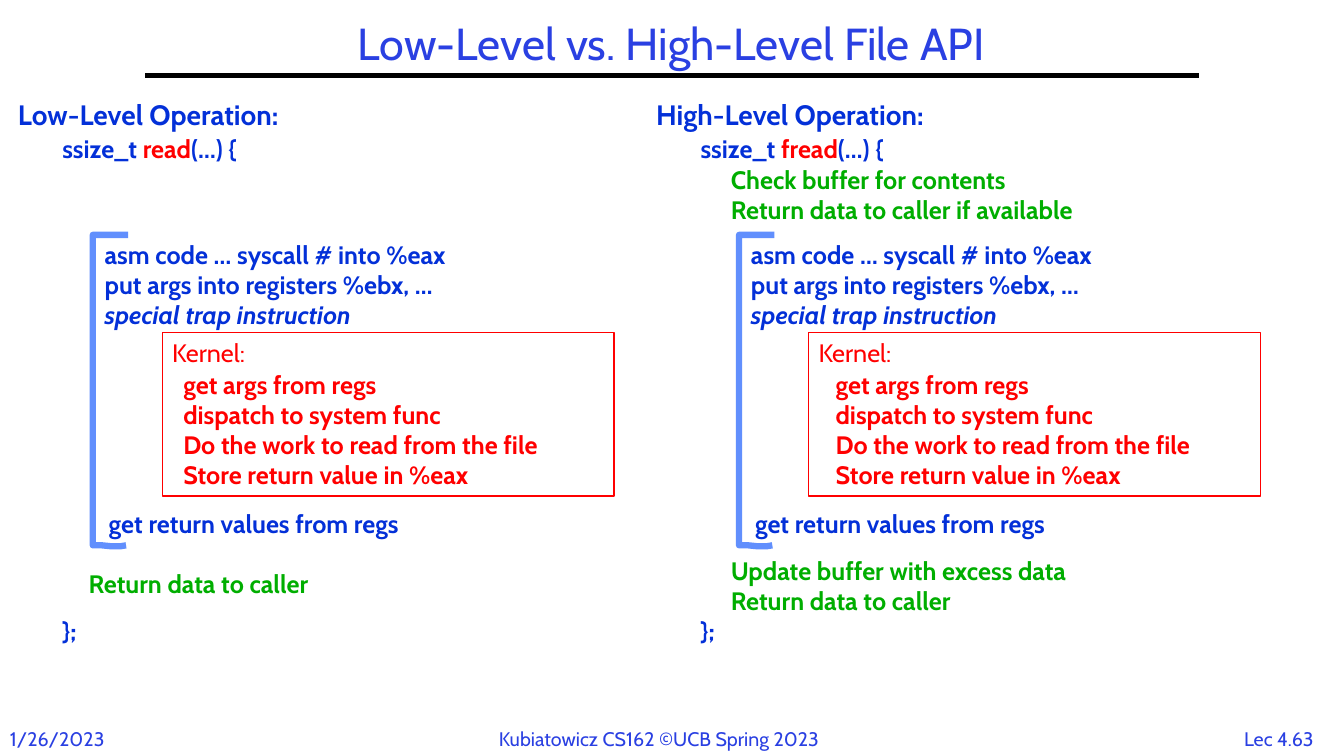
from pptx import Presentation
from pptx.dml.color import RGBColor
from pptx.enum.shapes import MSO_CONNECTOR, MSO_SHAPE
from pptx.enum.text import MSO_ANCHOR, PP_ALIGN
from pptx.oxml.ns import qn
from pptx.util import Pt
from lxml.etree import SubElement

PX = 9144  # EMU per px, 100 px to the inch
THEME = {
    "font": "Cabin",
    "title": RGBColor(0x2A, 0x40, 0xE2),
    "code": RGBColor(0x03, 0x30, 0xD8),
    "kernel": RGBColor(0xFF, 0x00, 0x00),
    "buffer": RGBColor(0x00, 0xAE, 0x00),
    "bracket": RGBColor(0x61, 0x8F, 0xFD),
    "rule": RGBColor(0x00, 0x00, 0x00),
    "title_size": 32, "heading_size": 20, "body_size": 18, "footer_size": 14,
}

TITLE = "Low-Level vs. High-Level File API"
FOOTERS = [
    ("1/26/2023", (0, 716, 140, 34), PP_ALIGN.LEFT),
    ("Kubiatowicz CS162 ©UCB Spring 2023", (485, 716, 363, 34), PP_ALIGN.LEFT),
    ("Lec 4.63", (1220, 716, 97, 33), PP_ALIGN.CENTER),
]
SYSCALL = ["asm code … syscall # into %eax", "put args into registers %ebx, …"]
TRAP = "special trap instruction"
KERNEL_TITLE = "Kernel:"
KERNEL_STEPS = ["get args from regs", "dispatch to system func",
                "Do the work to read from the file", "Store return value in %eax"]
RESULT = "get return values from regs"
COLUMNS = [
    {"heading": "Low-Level Operation:", "function": "read",
     "outer": 0, "inner": 0, "steps": 0,
     "extras": [((67, 559, 555, 40), ["Return data to caller"])]},
    {"heading": "High-Level Operation:", "function": "fread",
     "outer": 633, "inner": 641, "steps": 647,
     "extras": [((704, 158, 555, 71), ["Check buffer for contents",
                                       "Return data to caller if available"]),
                ((704, 546, 555, 71), ["Update buffer with excess data",
                                       "Return data to caller"])]},
]
BRACKET = [(127, 233), (92, 233), (92, 541), (101, 541), (111, 542), (119, 542), (125, 541)]
CLOSING_GAP = 323  # points between the function's opening and closing lines


def emu(*lengths):
    return [length * PX for length in lengths]


def apply(target, **values):
    for name, value in values.items():
        setattr(target, name, value)


def write(frame, lines, size, color, bold=True, indent=0, **para_values):
    """Each line is a string or a list of (text, font values) pairs."""
    for index, line in enumerate(lines):
        para = frame.paragraphs[0] if index == 0 else frame.add_paragraph()
        apply(para, **para_values)
        if indent:
            properties = para._p.get_or_add_pPr()
            properties.set("marL", str(indent * PX))
            properties.set("indent", "0")
        for text, changes in [(line, {})] if isinstance(line, str) else line:
            span = para.add_run()
            span.text = text
            values = {"name": THEME["font"], "size": Pt(THEME[size]), "bold": bold, **changes}
            span.font.color.rgb = THEME[values.pop("color", color)]
            apply(span.font, **values)


def add_text(page, place, lines, size="body_size", color="code", wrap=True,
             anchor=MSO_ANCHOR.TOP, **style):
    frame = page.shapes.add_textbox(*emu(*place)).text_frame
    apply(frame, word_wrap=wrap, vertical_anchor=anchor)
    write(frame, lines, size, color, **style)
    return frame


def add_bracket(page, shift):
    points = [(x + shift, y) for x, y in BRACKET]
    builder = page.shapes.build_freeform(*points[0], scale=PX)
    builder.add_line_segments(points[1:], close=False)
    bracket = builder.convert_to_shape()
    bracket.shadow.inherit = False
    bracket.fill.background()
    bracket.line.color.rgb = THEME["bracket"]
    bracket.line.width = Pt(4.5)


def add_kernel(page, shift):
    kernel = page.shapes.add_shape(MSO_SHAPE.RECTANGLE, *emu(161 + shift, 330, 448, 162))
    kernel.shadow.inherit = False
    kernel.fill.background()
    kernel.line.color.rgb = THEME["kernel"]
    kernel.line.width = Pt(1)
    kernel.text_frame.vertical_anchor = MSO_ANCHOR.TOP
    write(kernel.text_frame, [KERNEL_TITLE], "body_size", "kernel", bold=False,
          alignment=PP_ALIGN.LEFT)


def add_column(page, column):
    outer, inner = column["outer"], column["inner"]
    signature = [("ssize_t ", {}), (column["function"], {"color": "kernel"}), ("(…) {", {})]
    body = add_text(page, (52 + outer, 127, 573, 525), [signature, "};"])
    body.paragraphs[1].space_before = Pt(CLOSING_GAP)
    add_text(page, (8 + outer, 92, 310, 44), [column["heading"]], "heading_size", wrap=False)
    add_text(page, (78 + inner, 232, 573, 101), SYSCALL + [[(TRAP, {"italic": True})]], indent=16)
    add_text(page, (87 + inner, 499, 555, 40), [RESULT], indent=11)
    add_kernel(page, inner)
    add_text(page, (161 + column["steps"], 361, 506, 131), KERNEL_STEPS, color="kernel", indent=11)
    for place, lines in column["extras"]:
        add_text(page, place, lines, color="buffer", indent=11)
    add_bracket(page, inner)


def main():
    deck = Presentation()
    apply(deck, slide_width=1333 * PX, slide_height=750 * PX)
    page = deck.slides.add_slide(deck.slide_layouts[6])
    for text, place, alignment in FOOTERS:
        add_text(page, place, [text], "footer_size", "title", wrap=False, bold=False,
                 alignment=alignment)
    rule = page.shapes.add_connector(MSO_CONNECTOR.STRAIGHT, *emu(144, 75, 1189, 75))
    rule.line.color.rgb = THEME["rule"]
    rule.line.width = Pt(3)
    SubElement(rule._element.spPr, qn("a:effectLst"))
    add_text(page, (144, 17, 1044, 58), [TITLE], "title_size", "title", bold=False,
             anchor=MSO_ANCHOR.MIDDLE, alignment=PP_ALIGN.CENTER, line_spacing=0.9)
    for column in COLUMNS:
        add_column(page, column)
    deck.save("out.pptx")


if __name__ == "__main__":
    main()
